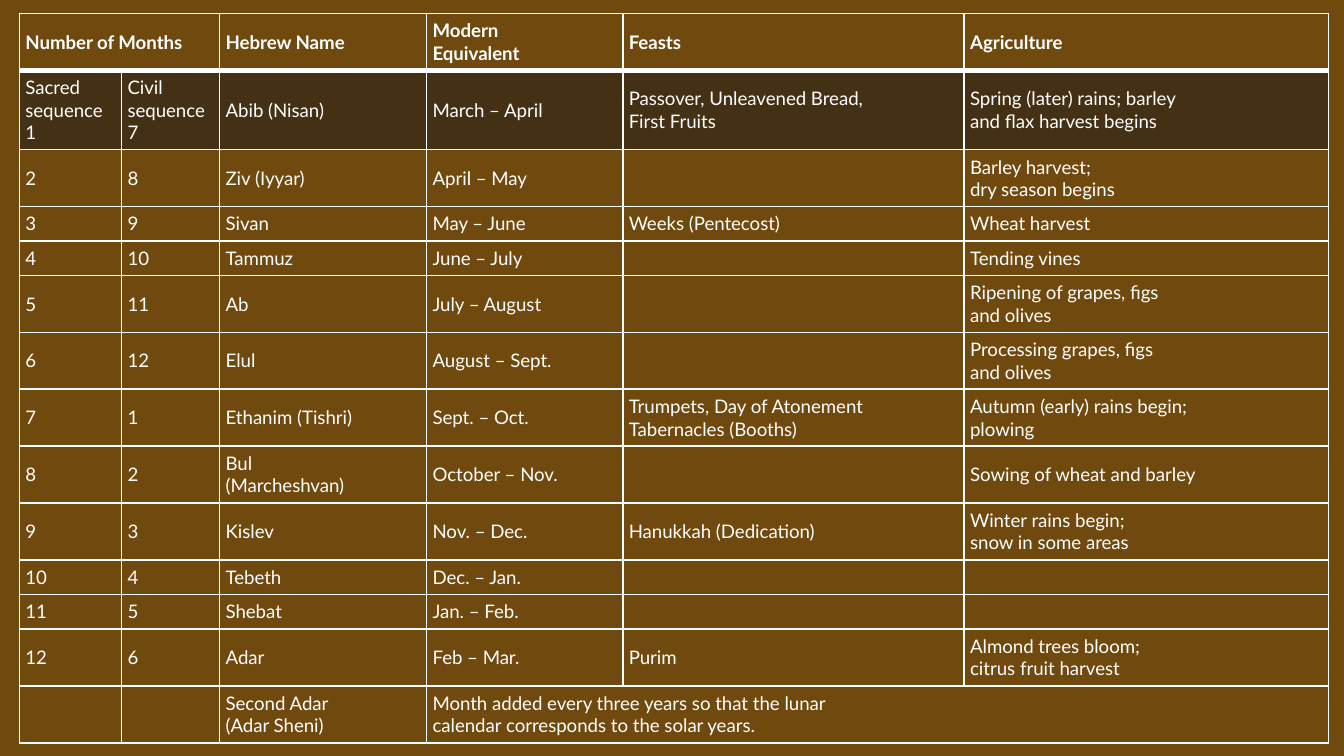
from lxml import etree
from pptx import Presentation
from pptx.dml.color import RGBColor
from pptx.enum.text import MSO_ANCHOR
from pptx.oxml.ns import qn
from pptx.util import Inches, Pt

MIDDLE = MSO_ANCHOR.MIDDLE
WIDE = 10
HIGH = WIDE * 9 / 16
FONT, SIZE = "Lato", 10
WHITE, BROWN, DARK = "FFFFFF", "70490F", "191919"
PAD = Pt(3.2)
COLS = [0.76, 0.73, 1.54, 1.46, 2.54, 2.71]

# "|" starts a paragraph, "\n" breaks a line
MONTHS = [
    ["Number of Months", "", "Hebrew Name", "Modern \nEquivalent", "Feasts", "Agriculture"],
    ["Sacred\nsequence|1", "Civil\nsequence|7", "Abib (Nisan)", "March – April",
     "Passover, Unleavened Bread, \nFirst Fruits",
     "Spring (later) rains; barley \nand flax harvest begins"],
    ["2", "8", "Ziv (Iyyar)", "April – May", "", "Barley harvest; \ndry season begins"],
    ["3", "9", "Sivan", "May – June", "Weeks (Pentecost)", "Wheat harvest"],
    ["4", "10", "Tammuz", "June – July", "", "Tending vines"],
    ["5", "11", "Ab", "July – August", "", "Ripening of grapes, figs \nand olives"],
    ["6", "12", "Elul", "August – Sept.", "", "Processing grapes, figs\nand olives"],
    ["7", "1", "Ethanim (Tishri)", "Sept. – Oct.",
     "Trumpets, Day of Atonement|Tabernacles (Booths)",
     "Autumn (early) rains begin;|plowing"],
    ["8", "2", "Bul \n(Marcheshvan)", "October – Nov.", "", "Sowing of wheat and barley"],
    ["9", "3", "Kislev", "Nov. – Dec.", "Hanukkah (Dedication)",
     "Winter rains begin; \nsnow in some areas"],
    ["10", "4", "Tebeth", "Dec. – Jan.", "", ""],
    ["11", "5", "Shebat", "Jan. – Feb.", "", ""],
    ["12", "6", "Adar", "Feb – Mar.", "Purim", "Almond trees bloom; \ncitrus fruit harvest"],
    ["", "", "Second Adar\n(Adar Sheni)",
     "Month added every three years so that the lunar\ncalendar corresponds to the solar years.",
     "", ""],
]


def paint(fill, color, alpha=None):
    fill.solid()
    fill.fore_color.rgb = RGBColor.from_string(color)
    if alpha is not None:
        tint = fill._xPr.find(qn("a:solidFill"))[0]
        etree.SubElement(tint, qn("a:alpha"), val=str(alpha * 1000))


def edge(cell, side, width):
    props = cell._tc.get_or_add_tcPr()
    line = etree.SubElement(props, qn("a:ln" + side), w=str(Pt(width)))
    solid = etree.SubElement(line, qn("a:solidFill"))
    etree.SubElement(solid, qn("a:srgbClr"), val=WHITE)


def write(cell, text, bold):
    cell.vertical_anchor = MIDDLE
    cell.margin_left = cell.margin_right = PAD
    cell.margin_top = cell.margin_bottom = PAD
    frame = cell.text_frame
    for i, part in enumerate(text.split("|")):
        para = frame.add_paragraph() if i else frame.paragraphs[0]
        if not part:
            # Small end mark keeps empty rows low
            etree.SubElement(para._p, qn("a:endParaRPr"), sz=str(SIZE * 100))
            continue
        for j, words in enumerate(part.split("\n")):
            if j:
                para.add_line_break()
            run = para.add_run()
            run.text = words
            run.font.name, run.font.size, run.font.bold = FONT, Pt(SIZE), bold
            run.font.color.rgb = RGBColor.from_string(WHITE)


def tall(row):
    lines = max(1 + text.count("\n") + text.count("|") for text in row)
    return lines * SIZE * 1.2 / 72 + 0.09


def calendar(slide, left, top, width):
    rows = [tall(row) for row in MONTHS]
    frame = slide.shapes.add_table(len(rows), len(COLS), Inches(left), Inches(top),
                                   Inches(width), Inches(sum(rows)))
    table = frame.table
    table.horz_banding = table.first_row = False
    for col, share in zip(table.columns, COLS):
        col.width = Inches(width * share / sum(COLS))
    for row, height in zip(table.rows, rows):
        row.height = Inches(height)

    # Cells: thick rule under the head, dark first month
    for r, row in enumerate(MONTHS):
        for c, text in enumerate(row):
            cell = table.cell(r, c)
            write(cell, text, r == 0)
            for side in "LRTB":
                thick = (r, side) in ((0, "B"), (1, "T"))
                edge(cell, side, 3 if thick else 1)
            if r == 1:
                paint(cell.fill, DARK, 50)
            else:
                cell.fill.background()

    # Joined cells
    table.cell(0, 0).merge(table.cell(0, 1))
    last = len(rows) - 1
    table.cell(last, 3).merge(table.cell(last, 5))


def main():
    deck = Presentation()
    deck.slide_width, deck.slide_height = Inches(WIDE), Inches(HIGH)
    slide = deck.slides.add_slide(deck.slide_layouts[6])
    paint(slide.background.fill, BROWN)
    calendar(slide, WIDE * 0.0145, 0.1, sum(COLS))
    deck.save("out.pptx")


if __name__ == "__main__":
    main()
